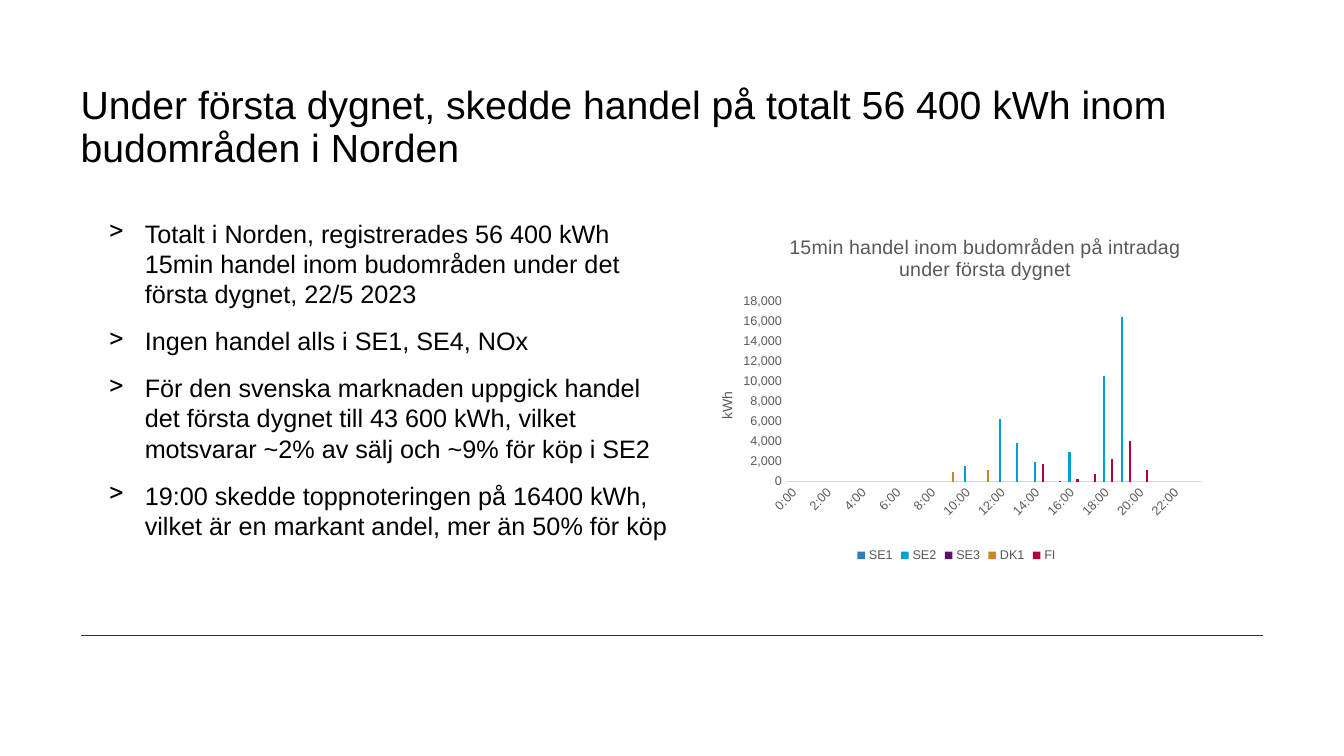
from dataclasses import dataclass

import pptx
import pptx.chart.data
import pptx.dml.color
import pptx.enum.chart
import pptx.enum.shapes
import pptx.enum.text
import pptx.oxml
import pptx.oxml.ns
import pptx.util
from lxml import etree

Cm = pptx.util.Cm
Pt = pptx.util.Pt
qn = pptx.oxml.ns.qn


@dataclass(frozen=True)
class Theme:
    font: str = "Arial"
    ink: str = "000000"
    rule: str = "333333"
    muted: str = "595959"
    axis: str = "D9D9D9"
    heading: int = 28
    body: int = 18
    chart_title: int = 14
    axis_title: int = 10
    label: int = 9


HEADING = "Under första dygnet, skedde handel på totalt 56 400 kWh inom budområden i Norden"
POINTS = [
    "Totalt i Norden, registrerades 56 400 kWh 15min handel inom budområden under det första dygnet, 22/5 2023",
    "Ingen handel alls i SE1, SE4, NOx",
    "För den svenska marknaden uppgick handel det första dygnet till 43 600 kWh, vilket motsvarar ~2% av sälj och ~9% för köp i SE2",
    "19:00 skedde toppnoteringen på 16400 kWh, vilket är en markant andel, mer än 50% för köp",
]
CHART_TITLE = "15min handel inom budområden på intradag under första dygnet"
TRADES = [
    ("SE1", "2E7EB7", {}),
    ("SE2", "009FD6", {10: 1600, 12: 6200, 13: 3900, 14: 2000, 16: 3000, 18: 10500, 19: 16400}),
    ("SE3", "5C146B", {}),
    ("DK1", "CA8724", {9: 1000, 11: 1200}),
    ("FI", "B00043", {14: 1800, 15: 100, 16: 300, 17: 800, 18: 2300, 19: 4100, 20: 1200}),
]


class SlideBuilder:
    def __init__(self, page, theme):
        self.page = page
        self.theme = theme

    def color(self, value):
        return pptx.dml.color.RGBColor.from_string(value)

    def style(self, font, size, color):
        font.name = self.theme.font
        font.size = Pt(size)
        font.bold = False
        font.color.rgb = self.color(color)

    def rule(self, left, right, top):
        line = self.page.shapes.add_connector(
            pptx.enum.shapes.MSO_CONNECTOR.STRAIGHT, Cm(left), Cm(top), Cm(right), Cm(top))
        line.line.color.rgb = self.color(self.theme.rule)
        line.line.width = Pt(0.5)
        etree.SubElement(line.element.spPr, qn("a:effectLst"))

    def text(self, bounds, lines, size, bullet=None, spacing=None, after=0, bottom=False):
        box = self.page.shapes.add_textbox(*map(Cm, bounds))
        frame = box.text_frame
        frame.word_wrap = True
        frame.margin_left = frame.margin_right = frame.margin_top = frame.margin_bottom = 0
        anchor = pptx.enum.text.MSO_ANCHOR
        frame.vertical_anchor = anchor.BOTTOM if bottom else anchor.TOP
        for index, line in enumerate(lines):
            para = frame.add_paragraph() if index else frame.paragraphs[0]
            if bullet:
                properties = para._p.get_or_add_pPr()
                properties.set("marL", str(Cm(0.9)))
                properties.set("indent", str(-Cm(0.9)))
                etree.SubElement(properties, qn("a:buChar")).set("char", bullet)
            para.line_spacing = spacing
            para.space_after = Pt(after)
            span = para.add_run()
            span.text = line
            self.style(span.font, size, self.theme.ink)

    def place(self, element, x, y, width=None, height=None):
        layout = element.find(qn("c:layout"))
        if layout is None:
            layout = etree.Element(qn("c:layout"))
            text = element.find(qn("c:tx"))
            element.insert(0 if text is None else 1, layout)
        manual = etree.SubElement(layout, qn("c:manualLayout"))
        settings = [("xMode", "edge"), ("yMode", "edge"), ("x", x), ("y", y)]
        if width:
            settings.insert(0, ("layoutTarget", "inner"))
            settings += [("w", width), ("h", height)]
        for name, value in settings:
            etree.SubElement(manual, qn("c:" + name)).set("val", str(value))

    def chart_text(self, title, text, size, x, y):
        span = title.text_frame.paragraphs[0].add_run()
        span.text = text
        self.style(span.font, size, self.theme.muted)
        self.place(title.element, x, y)

    def column_chart(self, bounds, title, unit, categories, trades):
        kinds = pptx.enum.chart
        theme = self.theme
        data = pptx.chart.data.CategoryChartData(number_format="#,##0")
        data.categories = categories
        for name, _, volumes in trades:
            data.add_series(name, [volumes.get(hour) for hour in range(len(categories))])
        chart = self.page.shapes.add_chart(
            kinds.XL_CHART_TYPE.COLUMN_CLUSTERED, *map(Cm, bounds), data).chart
        self.style(chart.font, theme.axis_title, theme.ink)
        chart.has_title = True
        self.chart_text(chart.chart_title, title, theme.chart_title, 0.16, 0.05)
        self.place(chart.element.find(".//" + qn("c:plotArea")), 0.16, 0.25, 0.83, 0.51)

        plot = chart.plots[0]
        plot.vary_by_categories = False
        plot.gap_width = 219
        plot.overlap = -27
        for series, (_, color, _) in zip(plot.series, trades):
            series.format.fill.solid()
            series.format.fill.fore_color.rgb = self.color(color)

        for axis in (chart.category_axis, chart.value_axis):
            axis.has_major_gridlines = False
            axis.major_tick_mark = axis.minor_tick_mark = kinds.XL_TICK_MARK.NONE
            self.style(axis.tick_labels.font, theme.label, theme.muted)
        hours = chart.category_axis.format.line
        hours.color.rgb = self.color(theme.axis)
        hours.width = Pt(0.75)
        hour_axis = chart.element.find(".//" + qn("c:catAx"))
        hour_axis.find(qn("c:txPr")).find(qn("a:bodyPr")).set("rot", "-2700000")
        skip = etree.Element(qn("c:tickLblSkip"))
        skip.set("val", "2")
        hour_axis.find(qn("c:noMultiLvlLbl")).addprevious(skip)

        volume = chart.value_axis
        volume.minimum_scale, volume.maximum_scale, volume.major_unit = 0, 18000, 2000
        volume.tick_labels.number_format = "#,##0"
        volume.tick_labels.number_format_is_linked = False
        volume.format.line.fill.background()
        volume.has_title = True
        self.chart_text(volume.axis_title, unit, theme.axis_title, 0.02, 0.5)
        volume.axis_title.element.find(".//" + qn("a:bodyPr")).set("rot", "-5400000")

        chart.has_legend = True
        chart.legend.position = kinds.XL_LEGEND_POSITION.BOTTOM
        chart.legend.include_in_layout = False
        self.style(chart.legend.font, theme.label, theme.muted)


def main():
    deck = pptx.Presentation()
    deck.slide_width, deck.slide_height = Cm(33.87), Cm(19.05)
    theme = Theme()
    slide = SlideBuilder(deck.slides.add_slide(deck.slide_layouts[6]), theme)
    slide.rule(2.03, 31.83, 16)
    slide.text((2.03, 1.3, 29.8, 3), [HEADING], theme.heading, spacing=0.9, bottom=True)
    slide.text((2.75, 5.49, 14.4, 12.1), POINTS, theme.body, bullet=">", after=12)
    hours = [f"{hour}:00" for hour in range(24)]
    slide.column_chart((17.78, 5.36, 12.65, 8.92), CHART_TITLE, "kWh", hours, TRADES)
    deck.save("out.pptx")


if __name__ == "__main__":
    main()
